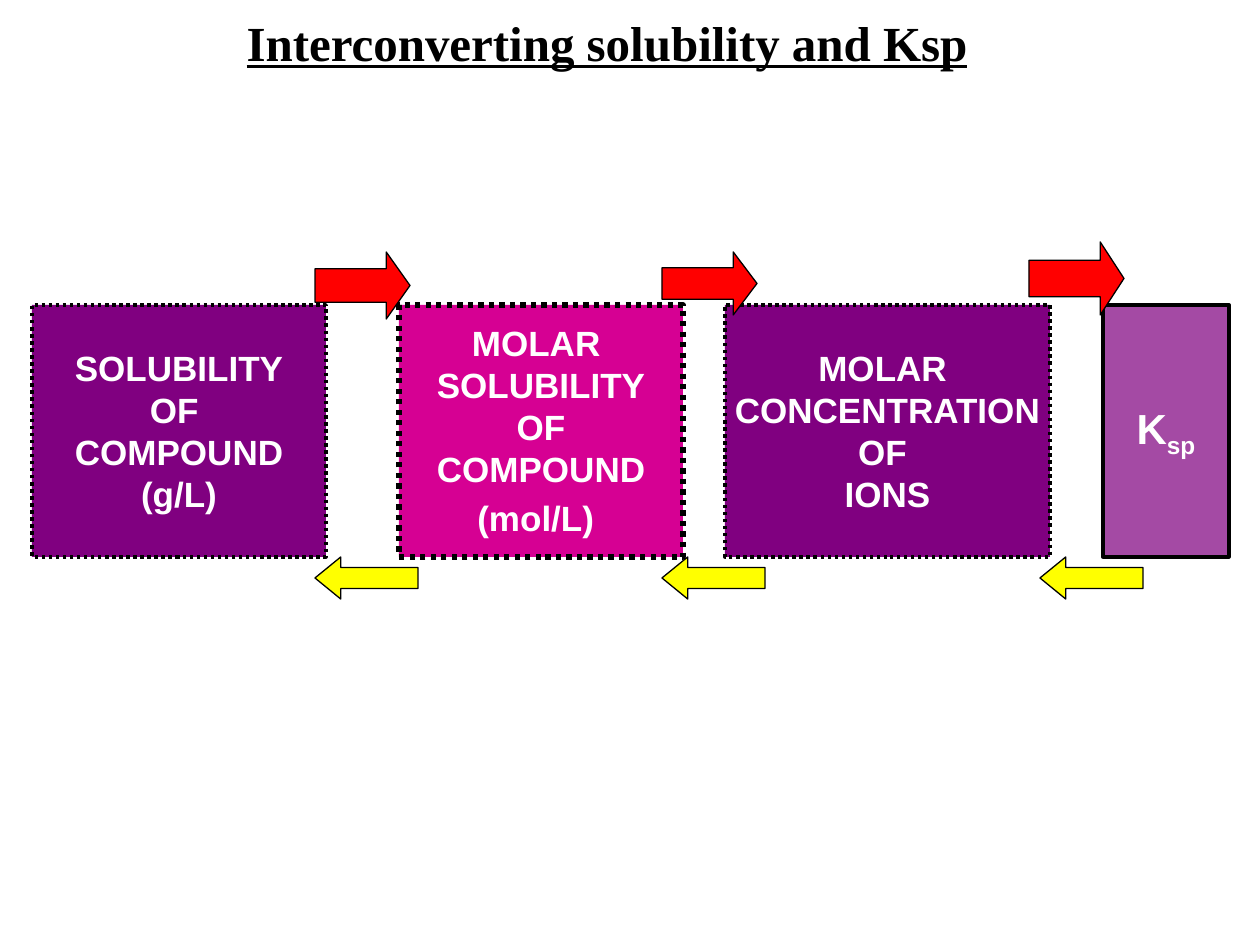
from dataclasses import dataclass

import pptx
import pptx.dml.color
import pptx.enum.dml
import pptx.enum.shapes
import pptx.enum.text
import pptx.oxml
import pptx.oxml.ns
import pptx.util

EMU_PER_PX = 914400 / 126
BOX_TOP, BOX_HEIGHT = 305, 252
RIGHT_ARROW = pptx.enum.shapes.MSO_SHAPE.RIGHT_ARROW
LEFT_ARROW = pptx.enum.shapes.MSO_SHAPE.LEFT_ARROW


@dataclass(frozen=True)
class Theme:
    black: str = "000000"
    white: str = "FFFFFF"
    purple: str = "800080"
    magenta: str = "D60093"
    red: str = "FF0000"
    yellow: str = "FFFF00"
    title_font: str = "Times New Roman"
    box_font: str = "Arial"
    title_size: int = 28
    box_size: int = 20
    symbol_size: int = 24


THEME = Theme()


@dataclass(frozen=True)
class Box:
    left: int
    width: int
    text: str
    fill: str = THEME.purple
    border: int = 2
    dotted: bool = True
    size: int = THEME.box_size


@dataclass(frozen=True)
class Arrow:
    kind: pptx.enum.shapes.MSO_SHAPE
    left: int
    top: int
    width: int
    height: int
    fill: str


# Trailing spaces shift the centred lines slightly to the left.
SOLUBILITY = Box(32, 294, "SOLUBILITY\nOF \nCOMPOUND\n(g/L)")
MOLAR_SOLUBILITY = Box(399, 284, "MOLAR \nSOLUBILITY\nOF\nCOMPOUND\n(mol/L)", THEME.magenta, 3)
ION_CONCENTRATION = Box(725, 325, "MOLAR \nCONCENTRATION\nOF \nIONS")
KSP = Box(1103, 126, "K", dotted=False, size=THEME.symbol_size)

ARROWS = (
    Arrow(RIGHT_ARROW, 315, 252, 95, 67, THEME.red),
    Arrow(RIGHT_ARROW, 662, 252, 95, 63, THEME.red),
    Arrow(RIGHT_ARROW, 1029, 242, 95, 73, THEME.red),
    *(Arrow(LEFT_ARROW, left, 557, 103, 42, THEME.yellow) for left in (1040, 662, 315)),
)


def px(length: int) -> pptx.util.Emu:
    return pptx.util.Emu(round(length * EMU_PER_PX))


def rgb(colour: str) -> pptx.dml.color.RGBColor:
    return pptx.dml.color.RGBColor.from_string(colour)


def format_run(run, font: str, size: int, colour: str) -> None:
    run.font.name = font
    run.font.size = pptx.util.Pt(size)
    run.font.bold = True
    run.font.color.rgb = rgb(colour)


def add_filled_shape(slide, kind, left: int, top: int, width: int, height: int,
                     fill: str, border: float):
    shape = slide.shapes.add_shape(kind, px(left), px(top), px(width), px(height))
    shape.shadow.inherit = False
    shape.fill.solid()
    shape.fill.fore_color.rgb = rgb(fill)
    shape.line.color.rgb = rgb(THEME.black)
    shape.line.width = pptx.util.Pt(border)
    return shape


def add_title(slide, text: str) -> None:
    title = slide.shapes.title
    title.left, title.top, title.width, title.height = map(px, (123, 6, 968, 374))
    text_frame = title.text_frame
    text_frame.text = text
    text_frame.word_wrap = True
    text_frame.auto_size = pptx.enum.text.MSO_AUTO_SIZE.NONE
    text_frame.vertical_anchor = pptx.enum.text.MSO_ANCHOR.TOP
    paragraph = text_frame.paragraphs[0]
    paragraph.alignment = pptx.enum.text.PP_ALIGN.CENTER
    run = paragraph.runs[0]
    format_run(run, THEME.title_font, THEME.title_size, THEME.black)
    run.font.underline = True


def add_box(slide, box: Box):
    shape = add_filled_shape(slide, pptx.enum.shapes.MSO_SHAPE.RECTANGLE, box.left, BOX_TOP,
                             box.width, BOX_HEIGHT, box.fill, box.border)
    if box.dotted:
        shape.line.dash_style = pptx.enum.dml.MSO_LINE.ROUND_DOT
    text_frame = shape.text_frame
    text_frame.text = box.text
    text_frame.word_wrap = False
    text_frame.vertical_anchor = pptx.enum.text.MSO_ANCHOR.MIDDLE
    for paragraph in text_frame.paragraphs:
        paragraph.alignment = pptx.enum.text.PP_ALIGN.CENTER
        format_run(paragraph.runs[0], THEME.box_font, box.size, THEME.white)
    return shape


def append_run(shape, text: str, font: str, colour: str):
    """Add a run in the symbol size to the last line of the shape."""
    run = shape.text_frame.paragraphs[-1].add_run()
    run.text = text
    format_run(run, font, THEME.symbol_size, colour)
    return run


def set_opacity(shape, percent: int) -> None:
    colour = shape.element.spPr.find(pptx.oxml.ns.qn("a:solidFill"))[0]
    colour.append(pptx.oxml.parse_xml(
        f'<a:alpha {pptx.oxml.ns.nsdecls("a")} val="{percent * 1000}"/>'))


def add_arrow(slide, arrow: Arrow) -> None:
    """Draw a block arrow whose head is a quarter of its length."""
    shape = add_filled_shape(slide, arrow.kind, arrow.left, arrow.top,
                             arrow.width, arrow.height, arrow.fill, 0.75)
    shape.adjustments[0] = 0.5
    shape.adjustments[1] = arrow.width / 4 / arrow.height


def main() -> None:
    presentation = pptx.Presentation()
    presentation.slide_width, presentation.slide_height = px(1260), px(945)
    slide = presentation.slides.add_slide(presentation.slide_layouts[5])
    add_title(slide, "Interconverting solubility and Ksp")

    add_box(slide, SOLUBILITY)
    molar_solubility = add_box(slide, MOLAR_SOLUBILITY)
    append_run(molar_solubility, " ", THEME.title_font, THEME.black)
    add_box(slide, ION_CONCENTRATION)
    ksp = add_box(slide, KSP)
    set_opacity(ksp, 71)
    subscript = append_run(ksp, "sp", THEME.box_font, THEME.white)
    subscript.font._element.set("baseline", "-25000")

    for arrow in ARROWS:
        add_arrow(slide, arrow)
    presentation.save("out.pptx")


if __name__ == "__main__":
    main()
